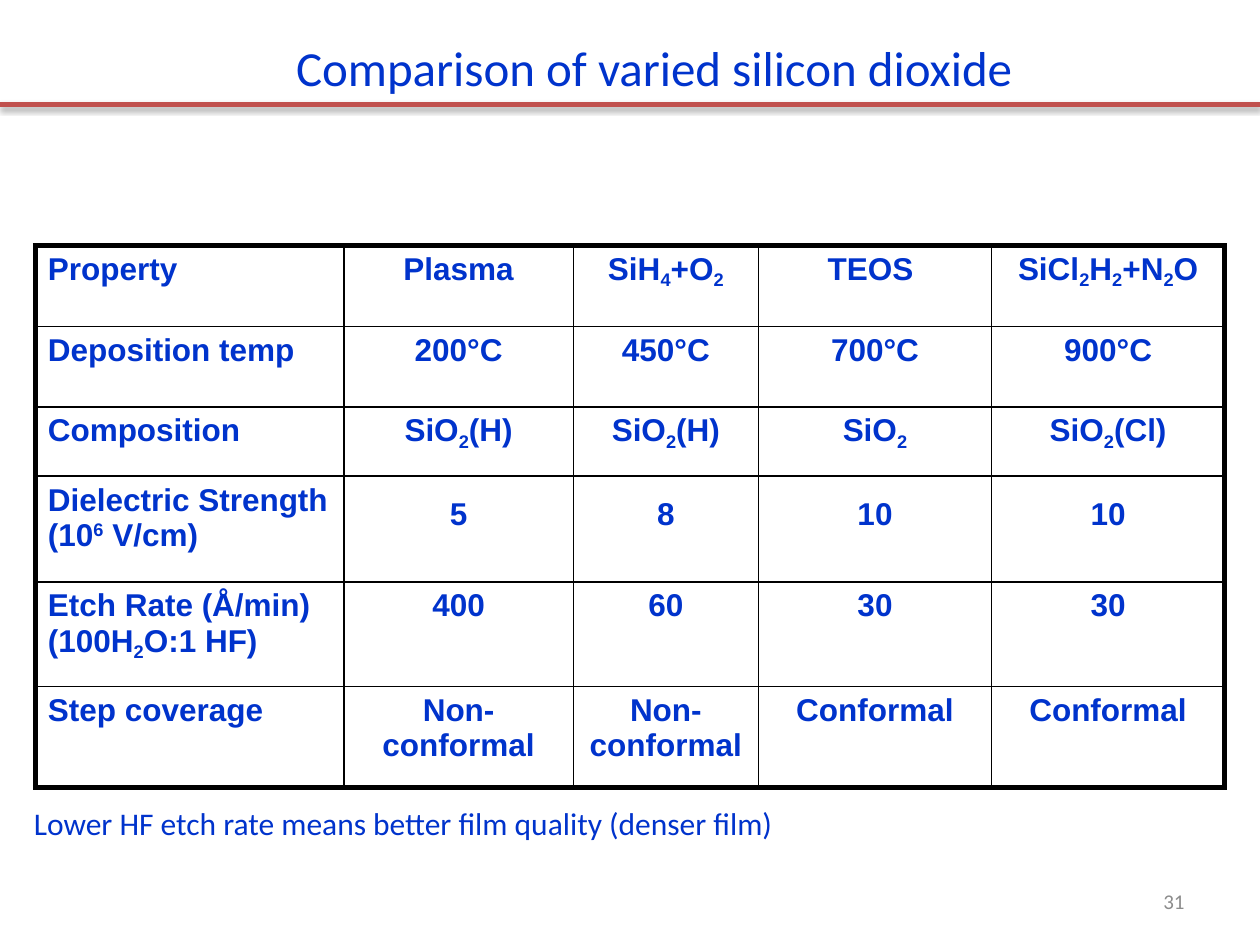
from lxml.etree import SubElement
from pptx import Presentation
from pptx.dml.color import RGBColor as Color
from pptx.enum.shapes import MSO_CONNECTOR as Connector
from pptx.enum.text import MSO_ANCHOR as Anchor, MSO_AUTO_SIZE as AutoSize, PP_ALIGN as Align
from pptx.oxml import parse_xml
from pptx.oxml.ns import nsdecls, qn
from pptx.util import Inches, Pt

THEME = {
    "ink": Color.from_string("0033CC"),
    "rule": Color.from_string("C0504D"),
    "muted": Color.from_string("8C8C8C"),
    "border": "000000",
    "heading": "Calibri",
    "cells": "Arial",
    "title": Pt(28),
    "body": Pt(18),
    "number": Pt(12),
    "thick": Pt(3),
    "thin": Pt(1),
}

COLUMNS = [2.45, 1.82, 1.47, 1.85, 1.85]
ROWS = [0.64, 0.64, 0.55, 0.84, 0.83, 0.8]
STRENGTH_ROW = 3
CELLS = [
    ["Property", "Plasma", "SiH_4+O_2", "TEOS ", "SiCl_2H_2+N_2O"],
    ["Deposition temp", "200°C", "450°C", "700°C", "900°C"],
    ["Composition", "SiO_2(H)", "SiO_2(H)", "SiO_2", "SiO_2(Cl)"],
    ["Dielectric Strength (10^6 V/cm)", "5", "8", "10", "10"],
    ["Etch Rate (Å/min) (100H_2O:1 HF)", "400", "60", "30", "30"],
    ["Step coverage", "Non-conformal", "Non-conformal", "Conformal", "Conformal"],
]
BASELINES = {"_": "-20000", "^": "30000"}


def write(para, text, font, size, color, align=Align.LEFT, bold=False):
    para.alignment = align
    para.font.name, para.font.size, para.font.bold = font, size, bold
    para.font.color.rgb = color
    for part in text.replace("_", "|_").replace("^", "|^").split("|"):
        baseline = BASELINES.get(part[0])
        if baseline:
            span = para.add_run()
            span.text = part[1]
            span.font._element.set("baseline", baseline)
            part = part[2:]
        if part:
            para.add_run().text = part


def set_borders(cell, widths):
    properties = cell._tc.get_or_add_tcPr()
    for position, (side, width) in enumerate(widths.items()):
        line = parse_xml(
            f'<a:ln{side} {nsdecls("a")} w="{width}"><a:solidFill>'
            f'<a:srgbClr val="{THEME["border"]}"/></a:solidFill></a:ln{side}>')
        properties.insert(position, line)


deck = Presentation()
deck.slide_width, deck.slide_height = Inches(10), Inches(7.5)
page = deck.slides.add_slide(deck.slide_layouts[5])

table = page.shapes.add_table(
    len(ROWS), len(COLUMNS), Inches(0.28), Inches(1.95),
    Inches(sum(COLUMNS)), Inches(sum(ROWS))).table
table.first_row = table.horz_banding = False
for column, width in zip(table.columns, COLUMNS):
    column.width = Inches(width)
for row, height in zip(table.rows, ROWS):
    row.height = Inches(height)

for r, texts in enumerate(CELLS):
    for c, text in enumerate(texts):
        cell = table.cell(r, c)
        cell.fill.background()
        outer = {"L": c == 0, "R": c == len(COLUMNS) - 1,
                 "T": r == 0, "B": r == len(ROWS) - 1}
        set_borders(cell, {side: THEME["thick"] if edge else THEME["thin"]
                           for side, edge in outer.items()})
        para = cell.text_frame.paragraphs[0]
        write(para, text, THEME["cells"], THEME["body"], THEME["ink"],
              Align.CENTER if c else Align.LEFT, True)
        if r == STRENGTH_ROW and c:
            para.line_spacing = 1.4

rule = page.shapes.add_connector(
    Connector.STRAIGHT, 0, Inches(0.83), deck.slide_width, Inches(0.83))
rule.line.color.rgb = THEME["rule"]
rule.line.width = THEME["thick"]
effects = SubElement(rule._element.spPr, qn("a:effectLst"))
shadow = SubElement(effects, qn("a:outerShdw"), blurRad=str(Pt(3.1)),
                    dist=str(Pt(1.6)), dir="5400000", rotWithShape="0")
shade = SubElement(shadow, qn("a:srgbClr"), val=THEME["border"])
SubElement(shade, qn("a:alpha"), val="38000")

title = page.shapes.title
title.left, title.top, title.width, title.height = map(Inches, (2.25, 0.25, 5.95, 0.57))
note = page.shapes.add_textbox(*map(Inches, (0.17, 6.33, 6.15, 0.4)))
number = page.shapes.add_textbox(*map(Inches, (7.17, 6.95, 2.33, 0.4)))

for box, text, size, color, align in [
    (title, "Comparison of varied silicon dioxide", THEME["title"], THEME["ink"], Align.LEFT),
    (note, "Lower HF etch rate means better film quality (denser film)",
     THEME["body"], THEME["ink"], Align.LEFT),
    (number, "31", THEME["number"], THEME["muted"], Align.RIGHT),
]:
    frame = box.text_frame
    frame.word_wrap = box is number
    frame.auto_size = AutoSize.NONE if box is number else AutoSize.SHAPE_TO_FIT_TEXT
    frame.vertical_anchor = Anchor.MIDDLE if box is number else Anchor.TOP
    write(frame.paragraphs[0], text, THEME["heading"], size, color, align)

deck.save("out.pptx")
